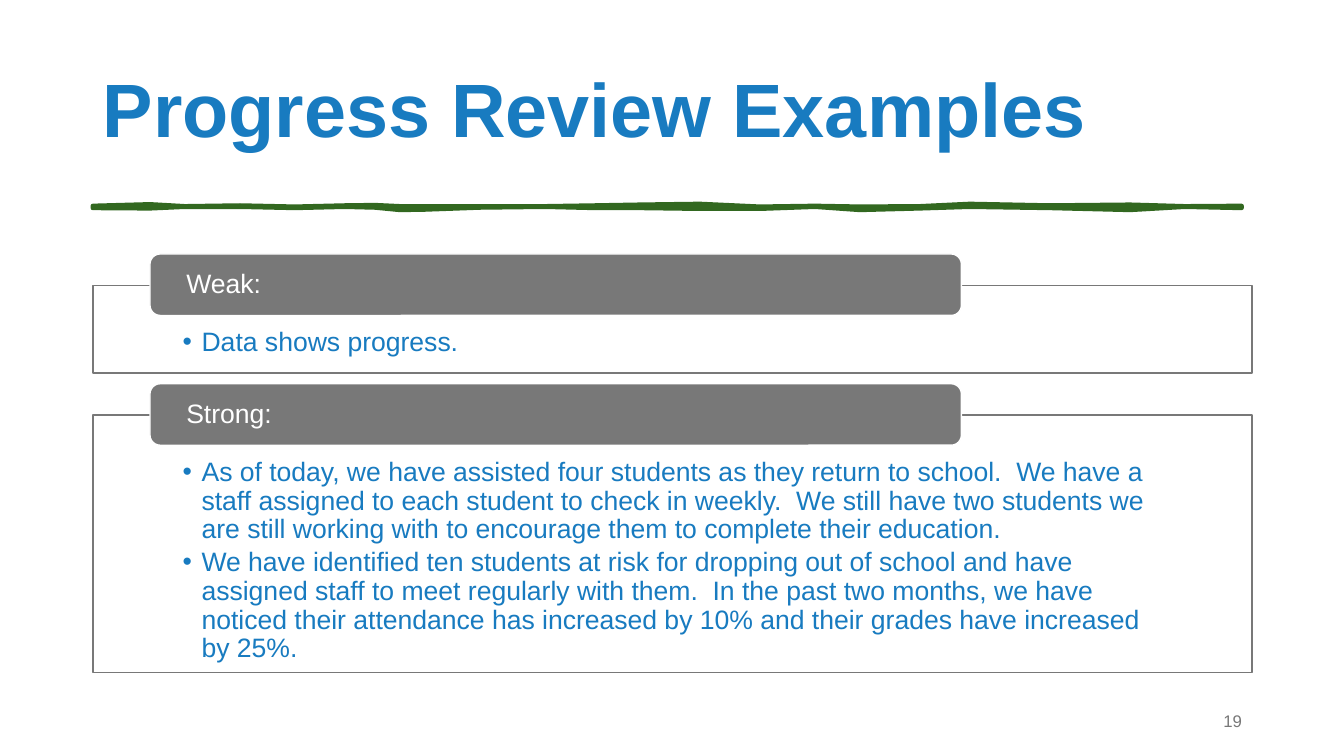
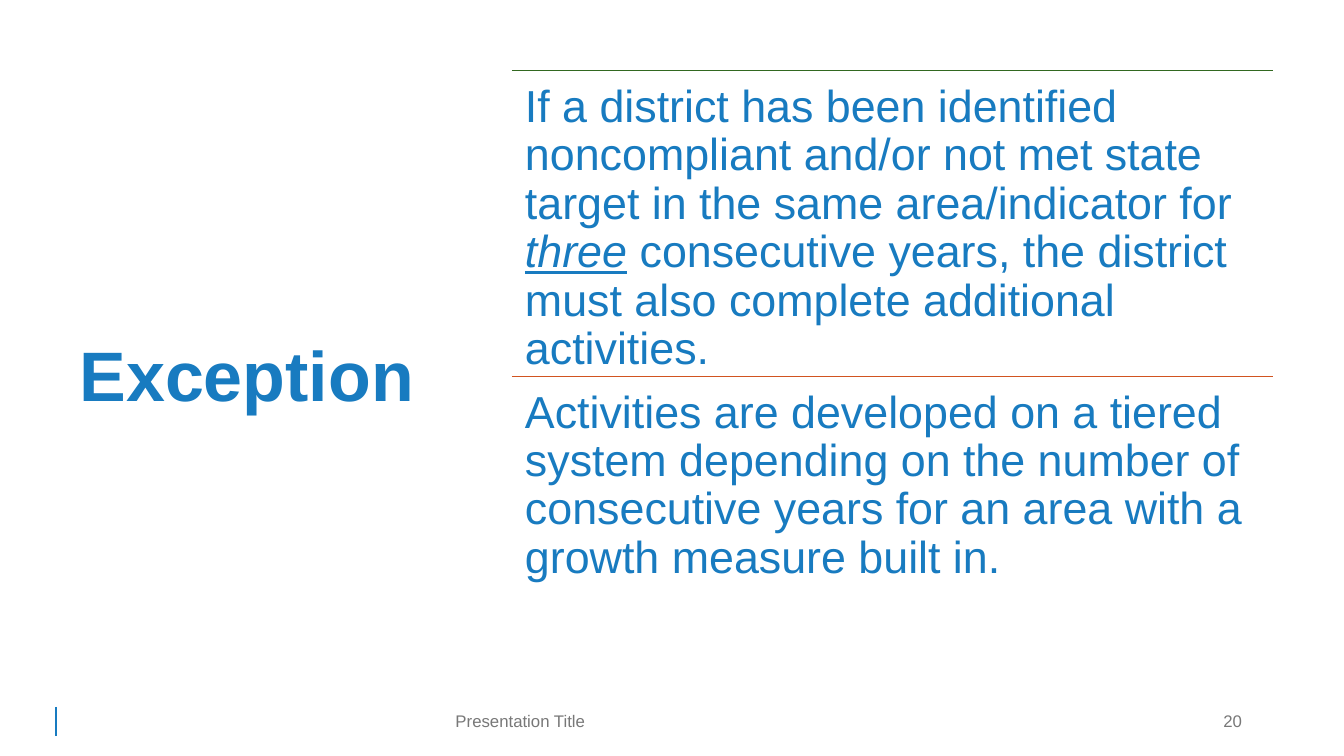
from dataclasses import dataclass, field
from typing import Any, NamedTuple

from lxml import etree
from pptx import Presentation
from pptx import util as u
from pptx.dml import color
from pptx.enum import shapes, text
from pptx.oxml import ns

BLUE, GREEN, ORANGE, GREY, WHITE = "187BC0", "326820", "D15420", "787878", "FFFFFF"
FONT = "Arial"
TWO_CONTENT = 3  # layout with a title and two bodies


class Area(NamedTuple):
    left: float
    top: float
    width: float
    height: float


class Span(NamedTuple):
    words: str
    formats: dict[str, Any] = {}


class Knot(NamedTuple):
    """Place along the brush stroke, with its reach above and below the centre."""
    x: float
    above: float
    below: float


@dataclass(frozen=True)
class TextStyle:
    size: float
    ink: str
    font: dict[str, Any] = field(default_factory=dict)
    para: dict[str, Any] = field(default_factory=dict)
    frame: dict[str, Any] = field(default_factory=dict)
    hanging: float = 0
    bullet: str = ""


@dataclass(frozen=True)
class Panel:
    heading: str
    points: list[str]
    height: float


@dataclass(frozen=True)
class Statement:
    spans: list[Span]
    rule_ink: str


def margins(left: float, top: float, bottom: float) -> dict[str, Any]:
    return dict(margin_left=u.Cm(left), margin_right=u.Cm(left),
                margin_top=u.Cm(top), margin_bottom=u.Cm(bottom))


MIDDLE = dict(vertical_anchor=text.MSO_ANCHOR.MIDDLE)
TOP = dict(vertical_anchor=text.MSO_ANCHOR.TOP)
LEFT = dict(alignment=text.PP_ALIGN.LEFT)
TIGHT = dict(LEFT, line_spacing=0.9, space_before=u.Pt(0))

TITLE = TextStyle(54, BLUE, dict(bold=True), TIGHT, MIDDLE)
SIDE_TITLE = TextStyle(50, BLUE, dict(bold=True), TIGHT, MIDDLE)
FOOTER = TextStyle(12, GREY, para=LEFT, frame=MIDDLE)
PAGE_NUMBER = TextStyle(12, GREY, para=dict(alignment=text.PP_ALIGN.RIGHT), frame=MIDDLE)
TAB = TextStyle(19, WHITE, para=TIGHT, frame=MIDDLE | margins(0.84, 0, 0))
POINTS = TextStyle(19, BLUE, para=dict(TIGHT, space_after=u.Pt(3)),
                   frame=TOP | margins(2.26, 1.09, 0.38), hanging=0.48, bullet="•")
STATEMENT = TextStyle(32, BLUE, para=TIGHT, frame=TOP | margins(0.33, 0.33, 0.33))

FOOTER_AREA = Area(11.23, 17.65, 11.43, 1.02)
NUMBER_AREA = Area(23.93, 17.65, 7.62, 1.02)

BRUSH_CENTRE = 5.21
BRUSH = [Knot(*values) for values in (
    (2.34, 0.02, 0.03), (3.78, 0.06, 0.04), (4.66, 0.01, 0), (6.05, 0.03, 0),
    (7.43, 0, 0.03), (8.69, 0.03, 0), (9.45, 0.04, 0.02), (10.08, 0.01, 0.08),
    (10.7, 0.01, 0.07), (12.1, 0.01, 0.02), (13.73, 0.01, 0), (15, 0.03, 0.03),
    (16.13, 0.05, 0.03), (17.64, 0.07, 0.05), (19.15, 0, 0.05), (20.54, 0.02, 0),
    (21.67, 0, 0.08), (23.18, 0.01, 0.04), (24.44, 0.07, 0), (26.46, 0.03, 0.03),
    (28.48, 0.05, 0.08), (29.86, 0.01, 0), (31.29, 0.02, 0.03))]

PANELS = [
    Panel("Weak:", ["Data shows progress."], 2.21),
    Panel("Strong:", [
        "As of today, we have assisted four students as they return to school.  We have a "
        "staff assigned to each student to check in weekly.  We still have two students we "
        "are still working with to encourage them to complete their education.",
        "We have identified ten students at risk for dropping out of school and have "
        "assigned staff to meet regularly with them.  In the past two months, we have "
        "noticed their attendance has increased by 10% and their grades have increased "
        "by 25%."], 6.48),
]

STATEMENTS = [
    Statement([
        Span("If a district has been identified noncompliant and/or not met state target "
             "in the same area/indicator for "),
        Span("three", dict(italic=True, underline=True)),
        Span(" consecutive years, the district must also complete additional activities."),
    ], GREEN),
    Statement([
        Span("Activities are developed on a tiered system depending on the number of "
             "consecutive years for an area with a growth measure built in."),
    ], ORANGE),
]


# Formatting helpers
def colour(code: str) -> color.RGBColor:
    return color.RGBColor.from_string(code)


def apply(target: Any, formats: dict[str, Any]) -> None:
    for name, value in formats.items():
        setattr(target, name, value)


def place(shape: Any, area: Area) -> None:
    apply(shape, {name: u.Cm(value) for name, value in area._asdict().items()})


def paint(shape: Any, fill: str, line: str, width: float) -> None:
    shape.fill.solid()
    shape.fill.fore_color.rgb = colour(fill)
    shape.line.color.rgb = colour(line)
    shape.line.width = u.Pt(width)


def write(shape: Any, paragraphs: list[list[Span]], style: TextStyle) -> None:
    frame = shape.text_frame
    apply(frame, dict(word_wrap=True, auto_size=text.MSO_AUTO_SIZE.NONE) | style.frame)
    for index, spans in enumerate(paragraphs):
        para = frame.add_paragraph() if index else frame.paragraphs[0]
        set_bullet(para, style)
        apply(para, style.para)
        for words, formats in spans:
            span = para.add_run()
            span.text = words
            apply(span.font, dict(name=FONT, size=u.Pt(style.size)) | style.font | formats)
            span.font.color.rgb = colour(style.ink)


def set_bullet(para: Any, style: TextStyle) -> None:
    properties = para._p.get_or_add_pPr()
    properties.set("marL", str(u.Cm(style.hanging)))
    properties.set("indent", str(-u.Cm(style.hanging)))
    if style.bullet:
        etree.SubElement(properties, ns.qn("a:buChar")).set("char", style.bullet)
    else:
        etree.SubElement(properties, ns.qn("a:buNone"))


# Shared parts
def add_page(deck: Any, title: str, area: Area, style: TextStyle, number: int) -> Any:
    page = deck.slides.add_slide(deck.slide_layouts[TWO_CONTENT])
    place(page.shapes.title, area)
    write(page.shapes.title, [[Span(title)]], style)
    add_label(page, str(number), NUMBER_AREA, PAGE_NUMBER)
    return page


def add_label(page: Any, words: str, area: Area, style: TextStyle) -> None:
    box = page.shapes.add_textbox(*map(u.Cm, area))
    write(box, [[Span(words)]], style)


def add_rule(page: Any, area: Area, ink: str, width: float) -> None:
    left, top, across, down = area
    ends = map(u.Cm, (left, top, left + across, top + down))
    rule = page.shapes.add_connector(shapes.MSO_CONNECTOR.STRAIGHT, *ends)
    rule.line.color.rgb = colour(ink)
    rule.line.width = u.Pt(width)
    etree.SubElement(rule._element.spPr, ns.qn("a:effectLst"))


def add_brush_stroke(page: Any) -> None:
    upper = [(u.Cm(knot.x), u.Cm(BRUSH_CENTRE - knot.above)) for knot in BRUSH]
    lower = [(u.Cm(knot.x), u.Cm(BRUSH_CENTRE + knot.below)) for knot in reversed(BRUSH)]
    builder = page.shapes.build_freeform(*upper[0])
    builder.add_line_segments(upper[1:] + lower, close=True)
    stroke = builder.convert_to_shape()
    stroke.shadow.inherit = False
    paint(stroke, GREEN, GREEN, 3.25)
    etree.SubElement(stroke.line._get_or_add_ln(), ns.qn("a:round"))


# Slides
def add_examples(deck: Any) -> None:
    page = add_page(deck, "Progress Review Examples", Area(2.34, 1.02, 29.21, 3.68), TITLE, 19)
    add_brush_stroke(page)
    top, gap, tab_rise = 7.19, 1.06, 0.79
    for index, panel in enumerate(PANELS, start=1):
        body = page.placeholders[index]
        place(body, Area(2.34, top, 29.21, panel.height))
        paint(body, WHITE, GREY, 1)
        write(body, [[Span(point)] for point in panel.points], POINTS)

        tab_area = Area(3.78, top - tab_rise, 20.45, 1.55)
        tab = page.shapes.add_shape(shapes.MSO_SHAPE.ROUNDED_RECTANGLE, *map(u.Cm, tab_area))
        tab.shadow.inherit = False
        paint(tab, GREY, WHITE, 1)
        write(tab, [[Span(panel.heading)]], TAB)
        top += panel.height + gap


def add_exception(deck: Any) -> None:
    page = add_page(deck, "Exception", Area(1.75, 1.78, 9.5, 15.52), SIDE_TITLE, 20)
    add_rule(page, Area(1.42, 17.81, 0, 0.73), BLUE, 1.5)
    add_label(page, "Presentation Title", FOOTER_AREA, FOOTER)
    left, top, width, height = 12.9, 1.78, 19.18, 7.7
    for index, statement in enumerate(STATEMENTS):
        row = Area(left, top + index * height, width, height)
        add_rule(page, row._replace(height=0), statement.rule_ink, 1)
        body = page.placeholders[index + 1]
        place(body, row)
        write(body, [statement.spans], STATEMENT)


def main() -> None:
    deck = Presentation()
    deck.slide_width, deck.slide_height = u.Cm(33.87), u.Cm(19.05)
    add_examples(deck)
    add_exception(deck)
    deck.save("out.pptx")


if __name__ == "__main__":
    main()
